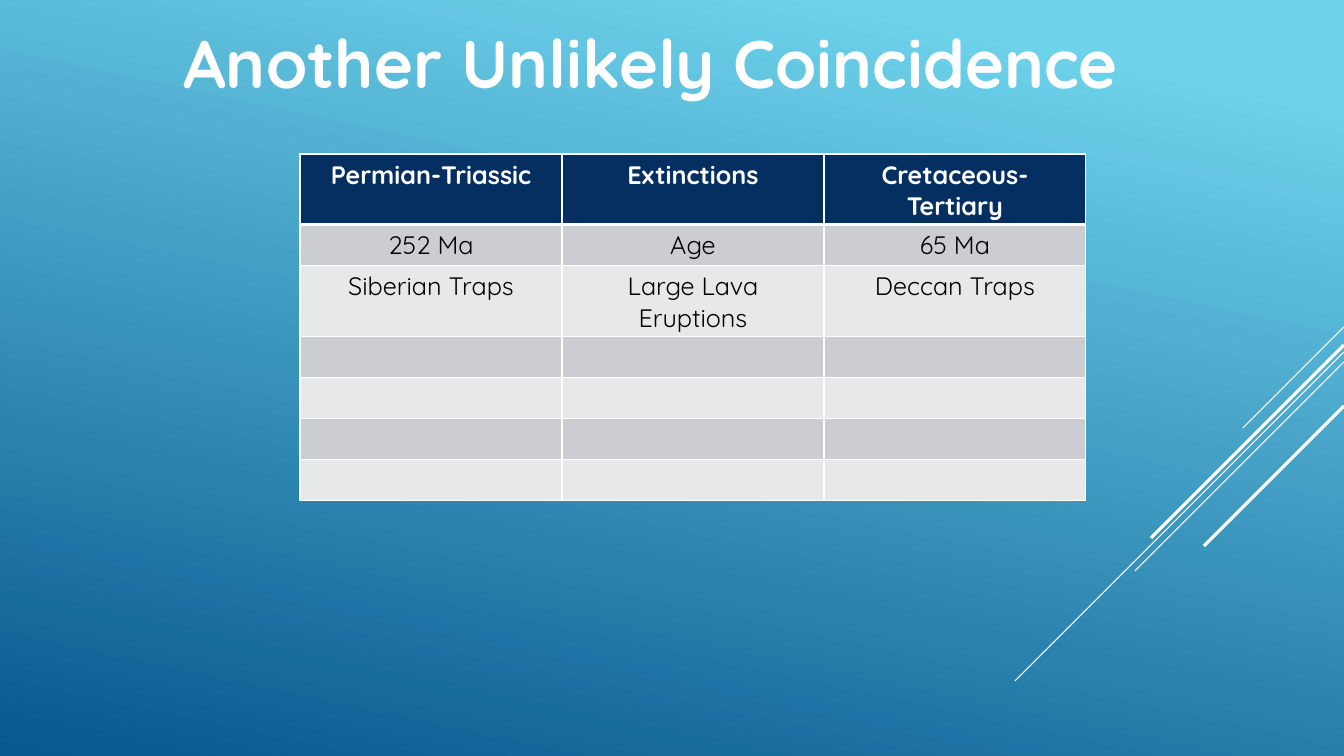
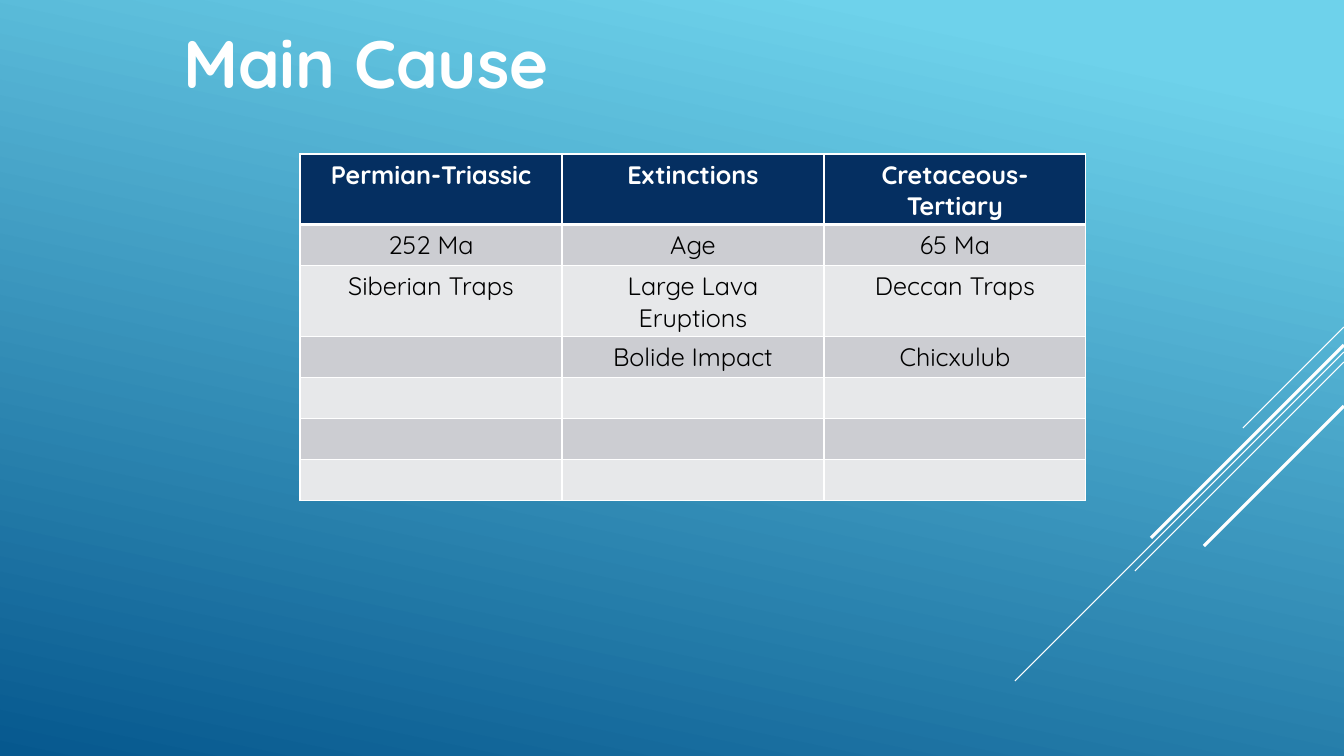
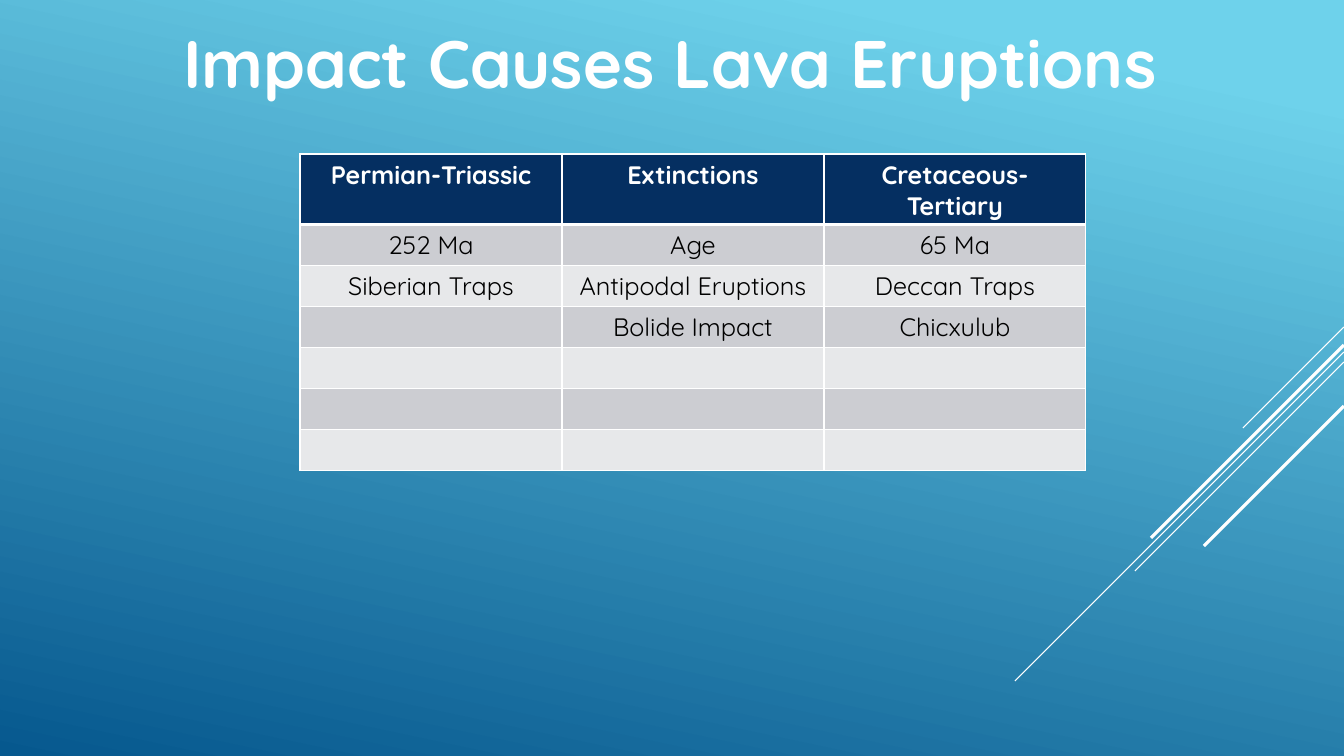
from dataclasses import dataclass

import pptx
import pptx.dml.color
import pptx.enum.shapes
import pptx.enum.text
import pptx.oxml
import pptx.oxml.ns
import pptx.presentation
import pptx.slide
import pptx.table
import pptx.text.text
import pptx.util

SLIDE_WIDTH, SLIDE_HEIGHT = 1344, 756
EMU_PER_PX = 12192000 / SLIDE_WIDTH
FONT = "Quicksand"
COLORS = {
    "sky": "6ED2EB",
    "deep": "06588E",
    "white": "FFFFFF",
    "black": "000000",
    "header": "052F61",
    "odd_row": "CCCDD2",
    "even_row": "E7E8EA",
}
TITLE_LEFT, TITLE_TOP, TITLE_HEIGHT = 173, 16, 92
TABLE_LEFT, TABLE_TOP = 300, 154
COLUMN_WIDTH, ROW_HEIGHT = 262, 41
ROW_COUNT = 7

Row = tuple[str, str, str]


@dataclass(frozen=True)
class Streak:
    """A 45-degree line running down and left from the right slide edge."""
    top: int
    span: int
    weight: float


@dataclass(frozen=True)
class Comparison:
    title: str
    title_width: int
    eruptions: str
    impact: Row = ("", "", "")

    def rows(self) -> list[Row]:
        """Filled rows, followed by empty ones up to the table's full height."""
        filled = [
            ("Permian-Triassic", "Extinctions", "Cretaceous-Tertiary"),
            ("252 Ma", "Age", "65 Ma"),
            ("Siberian Traps", self.eruptions, "Deccan Traps"),
            self.impact,
        ]
        return filled + [("", "", "")] * (ROW_COUNT - len(filled))


STREAKS = [
    Streak(327, 101, 0.75),
    Streak(352, 329, 0.75),
    Streak(362, 209, 0.75),
    Streak(345, 193, 2.25),
    Streak(406, 140, 2.25),
]
CHICXULUB: Row = ("", "Bolide Impact", "Chicxulub")
COMPARISONS = [
    Comparison("Another Unlikely Coincidence", 1003, "Large Lava Eruptions"),
    Comparison("Main Cause", 414, "Large Lava Eruptions", CHICXULUB),
    Comparison("Impact Causes Lava Eruptions", 1006, "Antipodal Eruptions", CHICXULUB),
]


def px(length: int) -> pptx.util.Emu:
    return pptx.util.Emu(round(length * EMU_PER_PX))


def rgb(name: str) -> pptx.dml.color.RGBColor:
    return pptx.dml.color.RGBColor.from_string(COLORS[name])


def style_paragraph(paragraph: pptx.text.text._Paragraph, size: int, color: str,
                    bold: bool, align: pptx.enum.text.PP_ALIGN) -> None:
    paragraph.alignment = align
    paragraph.font.name = FONT
    paragraph.font.size = pptx.util.Pt(size)
    paragraph.font.bold = bold
    paragraph.font.color.rgb = rgb(color)


def paint_background(deck: pptx.presentation.Presentation) -> None:
    fill = deck.slide_master.background.fill
    fill.gradient()
    fill.gradient_angle = 258
    for stop, color, position in zip(fill.gradient_stops, ("sky", "deep"), (0.1, 1)):
        stop.color.rgb = rgb(color)
        stop.position = position


def draw_streak(slide: pptx.slide.Slide, streak: Streak) -> None:
    connector = slide.shapes.add_connector(
        pptx.enum.shapes.MSO_CONNECTOR.STRAIGHT,
        px(SLIDE_WIDTH), px(streak.top),
        px(SLIDE_WIDTH - streak.span), px(streak.top + streak.span))
    connector.line.color.rgb = rgb("white")
    connector.line.width = pptx.util.Pt(streak.weight)
    connector.element.spPr.append(pptx.oxml.parse_xml(
        f"<a:effectLst {pptx.oxml.ns.nsdecls('a')}/>"))


def set_title(slide: pptx.slide.Slide, text: str, width: int) -> None:
    title = slide.shapes.title
    title.left, title.top = px(TITLE_LEFT), px(TITLE_TOP)
    title.width, title.height = px(width), px(TITLE_HEIGHT)
    frame = title.text_frame
    frame.text = text
    frame.word_wrap = False
    frame.auto_size = pptx.enum.text.MSO_AUTO_SIZE.SHAPE_TO_FIT_TEXT
    frame.vertical_anchor = pptx.enum.text.MSO_ANCHOR.TOP
    style_paragraph(frame.paragraphs[0], 48, "white", True, pptx.enum.text.PP_ALIGN.LEFT)


def add_borders(cell: pptx.table._Cell, bottom_weight: int) -> None:
    """Add white borders; call before filling, as the schema puts lines first."""
    properties = cell._tc.get_or_add_tcPr()
    for side, weight in (("L", 1), ("R", 1), ("T", 1), ("B", bottom_weight)):
        properties.append(pptx.oxml.parse_xml(
            f"<a:ln{side} {pptx.oxml.ns.nsdecls('a')} w='{pptx.util.Pt(weight)}'>"
            f"<a:solidFill><a:srgbClr val='{COLORS['white']}'/></a:solidFill>"
            f"</a:ln{side}>"))


def add_extinction_table(slide: pptx.slide.Slide, rows: list[Row]) -> None:
    column_count = len(rows[0])
    table = slide.shapes.add_table(
        len(rows), column_count, px(TABLE_LEFT), px(TABLE_TOP),
        px(COLUMN_WIDTH * column_count), px(ROW_HEIGHT * len(rows))).table
    for row_index, row in enumerate(rows):
        is_header = row_index == 0
        band = "header" if is_header else "odd_row" if row_index % 2 else "even_row"
        for column_index, text in enumerate(row):
            cell = table.cell(row_index, column_index)
            add_borders(cell, 3 if is_header else 1)
            cell.fill.solid()
            cell.fill.fore_color.rgb = rgb(band)
            if text:
                cell.text = text
            style_paragraph(cell.text_frame.paragraphs[0], 18,
                            "white" if is_header else "black", is_header,
                            pptx.enum.text.PP_ALIGN.CENTER)


def main() -> None:
    deck = pptx.Presentation()
    deck.slide_width, deck.slide_height = px(SLIDE_WIDTH), px(SLIDE_HEIGHT)
    paint_background(deck)
    title_only = deck.slide_layouts.get_by_name("Title Only")
    for comparison in COMPARISONS:
        slide = deck.slides.add_slide(title_only)
        for streak in STREAKS:
            draw_streak(slide, streak)
        set_title(slide, comparison.title, comparison.title_width)
        add_extinction_table(slide, comparison.rows())
    deck.save("out.pptx")


if __name__ == "__main__":
    main()
